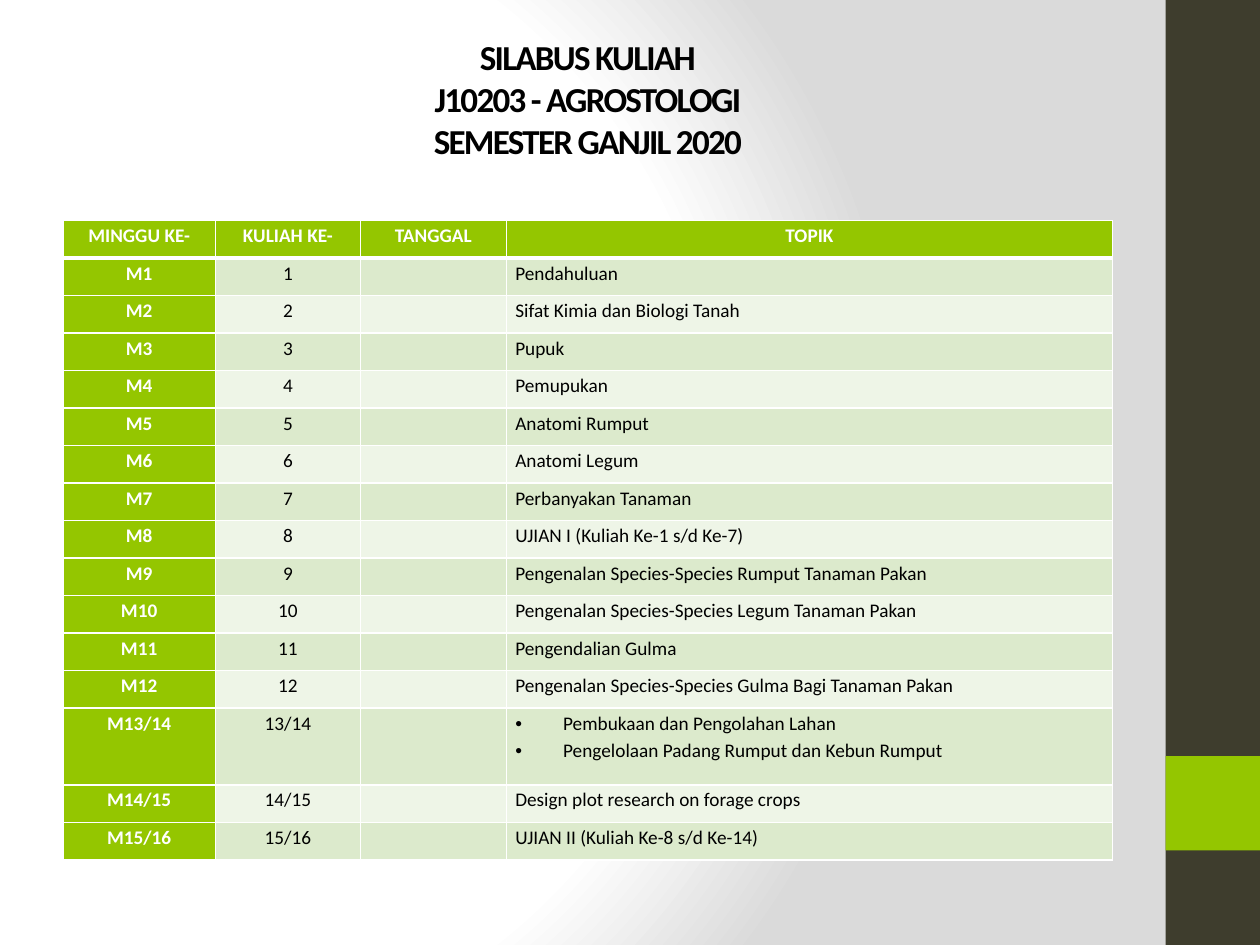
from lxml import etree
from pptx import Presentation
from pptx.dml.color import RGBColor
from pptx.enum import shapes, text
from pptx.oxml.ns import qn
from pptx.util import Inches, Pt

WHITE = RGBColor(0xFF, 0xFF, 0xFF)
BLACK = RGBColor(0, 0, 0)
GRAY = RGBColor(0xDA, 0xDA, 0xDA)
OLIVE = RGBColor(0x3E, 0x3D, 0x2D)
GREEN = RGBColor(0x94, 0xC6, 0x00)
BANDS = [RGBColor(0xDC, 0xEA, 0xCC), RGBColor(0xEE, 0xF5, 0xE7)]
FONT = "Calibri"

HEADERS = ["MINGGU KE-", "KULIAH KE-", "TANGGAL", "TOPIK"]
TOPICS = [
    "Pendahuluan",
    "Sifat Kimia dan Biologi Tanah",
    "Pupuk",
    "Pemupukan",
    "Anatomi Rumput",
    "Anatomi Legum",
    "Perbanyakan Tanaman",
    "UJIAN I (Kuliah Ke-1 s/d Ke-7)",
    "Pengenalan Species-Species Rumput Tanaman Pakan",
    "Pengenalan Species-Species Legum Tanaman Pakan",
    "Pengendalian Gulma",
    "Pengenalan Species-Species Gulma Bagi Tanaman Pakan",
    "Pembukaan dan Pengolahan Lahan\nPengelolaan Padang Rumput dan Kebun Rumput",
    "Design plot research on forage crops",
    "UJIAN II (Kuliah Ke-8 s/d Ke-14)",
]


def add_element(parent, tag, **attributes):
    return etree.SubElement(parent, qn(tag), attributes)


def add_border(cell, side, width, color):
    """Draw one side (L, R, T or B) of a cell; call before setting its fill."""
    properties = cell._tc.get_or_add_tcPr()
    line = add_element(properties, f"a:ln{side}", w=str(Pt(width)))
    add_element(add_element(line, "a:solidFill"), "a:srgbClr", val=str(color))


deck = Presentation()
deck.slide_width, deck.slide_height = Inches(10), Inches(7.5)
page = deck.slides.add_slide(deck.slide_layouts[6])

# Background: circular gradient
page.background.fill.gradient()
gradient = next(page._element.iter(qn("a:gradFill")))
for child in list(gradient):
    gradient.remove(child)
stops = add_element(gradient, "a:gsLst")
for position, color in [(0, WHITE), (75, WHITE), (100, GRAY)]:
    stop = add_element(stops, "a:gs", pos=str(position * 1000))
    add_element(stop, "a:srgbClr", val=str(color))
circle = add_element(gradient, "a:path", path="circle")
add_element(circle, "a:fillToRect", l="20000", t="50000", r="100000", b="50000")

# Side band with its accent
for top, height, color in [(0, 7.5, OLIVE), (6, 0.75, GREEN)]:
    band = page.shapes.add_shape(
        shapes.MSO_SHAPE.RECTANGLE, Inches(9.25), Inches(top), Inches(0.75), Inches(height))
    band.shadow.inherit = False
    band.fill.solid()
    band.fill.fore_color.rgb = color
    band.line.fill.background()

# Title
title = page.shapes.add_textbox(Inches(0.5), Inches(0.3), Inches(8.33), Inches(1.25))
frame = title.text_frame
frame.word_wrap = True
frame.vertical_anchor = text.MSO_ANCHOR.MIDDLE
frame.margin_bottom = Inches(0.34)
frame.text = "SILABUS KULIAH\vJ10203 - AGROSTOLOGI\vSEMESTER GANJIL 2020"
para = frame.paragraphs[0]
para.alignment = text.PP_ALIGN.CENTER
for span in para.runs:
    span.font.name, span.font.size, span.font.bold = FONT, Pt(20), True
    span.font.color.rgb = BLACK
    span.font._element.set("spc", "-100")

# Syllabus table
rows = [HEADERS]
for number, topic in enumerate(TOPICS, 1):
    lecture = str(number) if number < 13 else f"{number}/{number + 1}"
    rows.append([f"M{lecture}", lecture, "", topic])

table_height, tall_row = 5.08, 0.61
row_height = (table_height - tall_row) / (len(rows) - 1)
table = page.shapes.add_table(
    len(rows), len(HEADERS), Inches(0.5), Inches(1.75), Inches(8.33), Inches(table_height)).table
table.horz_banding = False
table.first_row = False
for column, width in zip(table.columns, [1.21, 1.15, 1.16, 4.81]):
    column.width = Inches(width)

for row_index, values in enumerate(rows):
    table.rows[row_index].height = Inches(tall_row if "\n" in values[3] else row_height)
    for column_index, value in enumerate(values):
        cell = table.cell(row_index, column_index)
        heading = row_index == 0 or column_index == 0
        cell.margin_left = cell.margin_right = Inches(0.07)
        cell.margin_top = cell.margin_bottom = 0
        for side in "LRTB":
            under_header = (row_index, side) in [(0, "B"), (1, "T")]
            add_border(cell, side, 3 if under_header else 1, WHITE)
        cell.fill.solid()
        cell.fill.fore_color.rgb = GREEN if heading else BANDS[(row_index - 1) % 2]

        cell.text_frame.text = value
        for para in cell.text_frame.paragraphs:
            para.line_spacing = 1.15
            if heading or column_index < 3:
                para.alignment = text.PP_ALIGN.CENTER
            if "\n" in value:
                properties = para._p.get_or_add_pPr()
                properties.set("marL", str(Inches(0.38)))
                properties.set("indent", str(Inches(-0.38)))
                add_element(properties, "a:buFont", typeface="Arial")
                add_element(properties, "a:buChar", char="•")
            for span in para.runs:
                span.font.name, span.font.size, span.font.bold = FONT, Pt(11), heading
                span.font.color.rgb = WHITE if heading else BLACK
            if not value:
                add_element(para._p, "a:endParaRPr", sz="1100")

deck.save("out.pptx")
